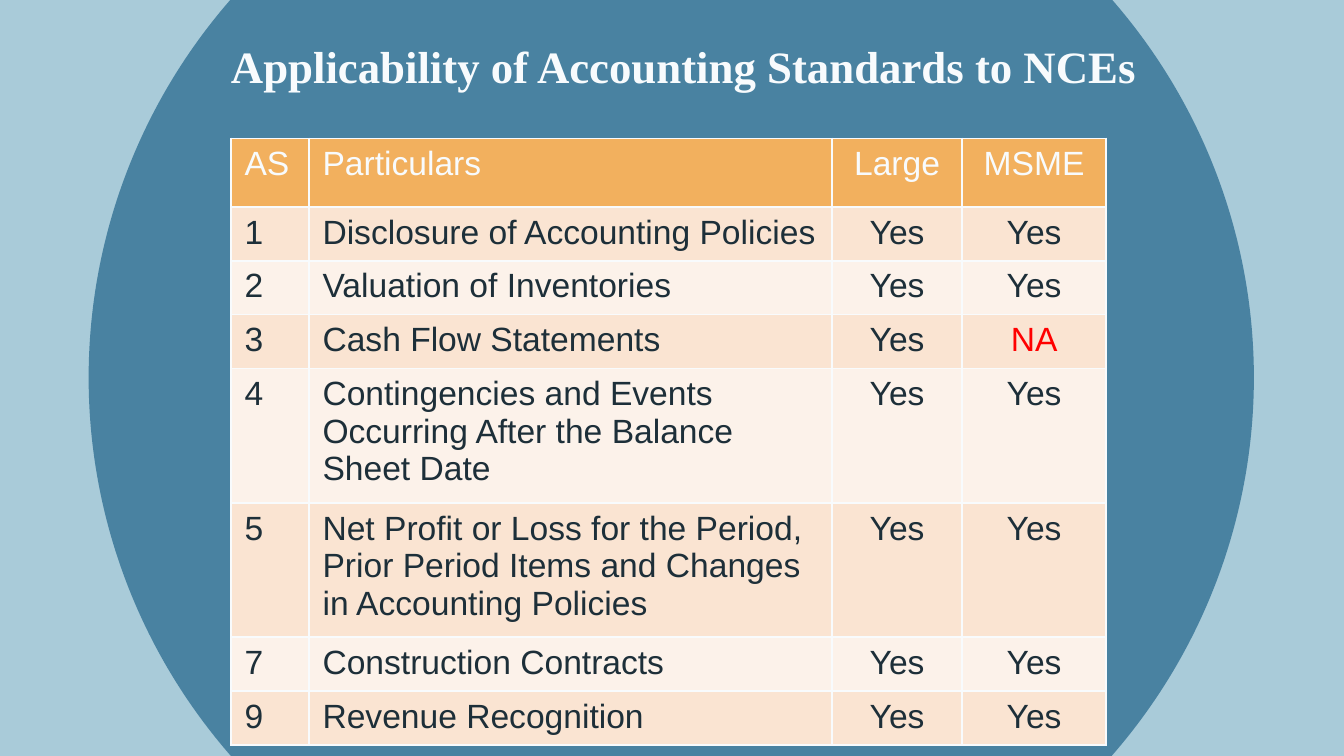
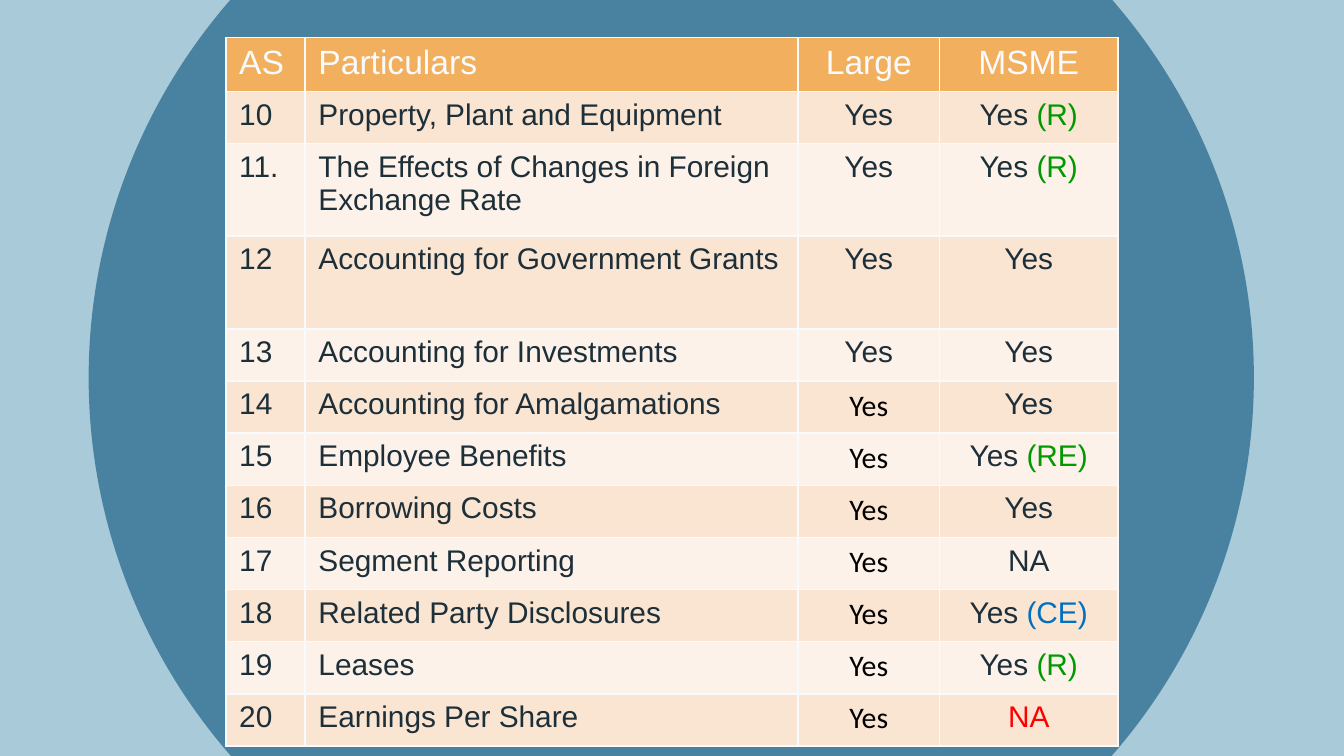
"""Two slides listing which accounting standards apply to NCEs."""
from lxml import etree
from pptx import Presentation
from pptx.dml.color import RGBColor
from pptx.enum.shapes import MSO_SHAPE
from pptx.enum.text import PP_ALIGN
from pptx.oxml.ns import qn
from pptx.util import Inches, Pt

OVAL = MSO_SHAPE.OVAL
LEFT, MID = PP_ALIGN.LEFT, PP_ALIGN.CENTER

SKY = RGBColor(0xA9, 0xCB, 0xD9)
TEAL = RGBColor(0x49, 0x82, 0xA1)
PALE = RGBColor(0xF8, 0xFB, 0xFD)
AMBER = RGBColor(0xF2, 0xB0, 0x5E)
PEACH = RGBColor(0xFA, 0xE4, 0xD2)
CREAM = RGBColor(0xFC, 0xF2, 0xEA)
INK = RGBColor(0x1D, 0x2F, 0x39)
BLACK = RGBColor(0x00, 0x00, 0x00)
RED = RGBColor(0xFF, 0x00, 0x00)
GREEN = RGBColor(0x00, 0x99, 0x00)
BLUE = RGBColor(0x00, 0x70, 0xC0)

HEAD = ("AS", "Particulars", "Large", "MSME")
TAGS = {"(R)": GREEN, "(RE)": GREEN, "(CE)": BLUE}
TITLE = "Applicability of Accounting Standards to NCEs"

FIRST = [
    ("1", "Disclosure of Accounting Policies", "Yes"),
    ("2", "Valuation of Inventories", "Yes"),
    ("3", "Cash Flow Statements", "NA"),
    ("4", "Contingencies and Events Occurring After the Balance Sheet Date", "Yes"),
    ("5", "Net Profit or Loss for the Period, Prior Period Items and Changes "
          "in Accounting Policies", "Yes"),
    ("7", "Construction Contracts", "Yes"),
    ("9", "Revenue Recognition", "Yes"),
]
NEXT = [
    ("10", "Property, Plant and Equipment", "Yes (R)"),
    ("11.", "The Effects of Changes in Foreign Exchange Rate", "Yes (R)"),
    ("12", "Accounting for Government Grants", "Yes"),
    ("13", "Accounting for Investments", "Yes"),
    ("14", "Accounting for Amalgamations", "Yes"),
    ("15", "Employee Benefits", "Yes (RE)"),
    ("16", "Borrowing Costs", "Yes"),
    ("17", "Segment Reporting", "NA"),
    ("18", "Related Party Disclosures", "Yes (CE)"),
    ("19", "Leases", "Yes (R)"),
    ("20", "Earnings Per Share", "NA"),
]
LOW = (5.26 - 2 * 0.69) / 10
PAGES = [
    dict(title=TITLE, rows=FIRST, x=1.72, y=1.03, cols=(0.58, 3.89, 0.97, 1.07),
         top=0.51, low=0.4, tall={"4": 1, "5": 1}, size=18,
         red=("3",), plain=()),
    dict(title=None, rows=NEXT, x=1.68, y=0.28, cols=(0.59, 3.67, 1.05, 1.33),
         top=LOW, low=LOW, tall={"11.": 0.69, "12": 0.69}, size=16,
         red=("20",), plain=("14", "15", "16", "17", "18", "19", "20")),
]


def style(font, name, size, color):
    font.name, font.size = name, Pt(size)
    font.color.rgb = color


def edge(cell):
    props = cell._tc.get_or_add_tcPr()
    for side in "LRTB":
        line = etree.SubElement(props, qn("a:ln" + side), w=str(Pt(1)))
        fill = etree.SubElement(line, qn("a:solidFill"))
        etree.SubElement(fill, qn("a:srgbClr"), val=str(PALE))


deck = Presentation()
deck.slide_width = Inches(10)
deck.slide_height = deck.slide_width * 9 // 16

for page in PAGES:
    slide = deck.slides.add_slide(deck.slide_layouts[6])
    slide.background.fill.solid()
    slide.background.fill.fore_color.rgb = SKY

    disc = slide.shapes.add_shape(
        OVAL, Inches(0.66), Inches(-1.49), Inches(8.67), Inches(8.6))
    disc.shadow.inherit = False
    disc.fill.solid()
    disc.fill.fore_color.rgb = TEAL
    disc.line.fill.background()

    if page["title"]:
        box = slide.shapes.add_textbox(
            Inches(1.62), Inches(0.24), Inches(7.06), Inches(0.5))
        box.text_frame.word_wrap = True
        para = box.text_frame.paragraphs[0]
        para.text = page["title"]
        style(para.font, "Times New Roman", 24, PALE)
        para.font.bold = True

    tall, size = page["tall"], page["size"]
    highs = [page["top"]] + [tall.get(row[0], page["low"]) for row in page["rows"]]
    grid = slide.shapes.add_table(
        len(highs), len(HEAD), Inches(page["x"]), Inches(page["y"]),
        Inches(sum(page["cols"])), Inches(sum(highs))).table
    for col, wide in zip(grid.columns, page["cols"]):
        col.width = Inches(wide)
    for row, high in zip(grid.rows, highs):
        row.height = Inches(high)

    lines = [HEAD] + [(num, name, "Yes", small) for num, name, small in page["rows"]]
    for r, line in enumerate(lines):
        num = line[0]
        for c, text in enumerate(line):
            cell = grid.cell(r, c)
            edge(cell)
            cell.fill.solid()
            cell.fill.fore_color.rgb = (PEACH if r % 2 else CREAM) if r else AMBER
            para = cell.text_frame.paragraphs[0]
            para.alignment = MID if c > 1 else LEFT
            if r == 0:
                style(para.font, "Arial", 18, PALE)
            elif c == 2 and num in page["plain"]:
                style(para.font, "Calibri", size, BLACK)
            else:
                hue = RED if c == 3 and num in page["red"] else INK
                style(para.font, "Arial", size, hue)
            word, _, tag = text.rpartition(" ")
            if tag in TAGS:
                para.add_run().text = word + " "
                run = para.add_run()
                run.text = tag
                run.font.color.rgb = TAGS[tag]
            else:
                para.text = text

deck.save("out.pptx")
